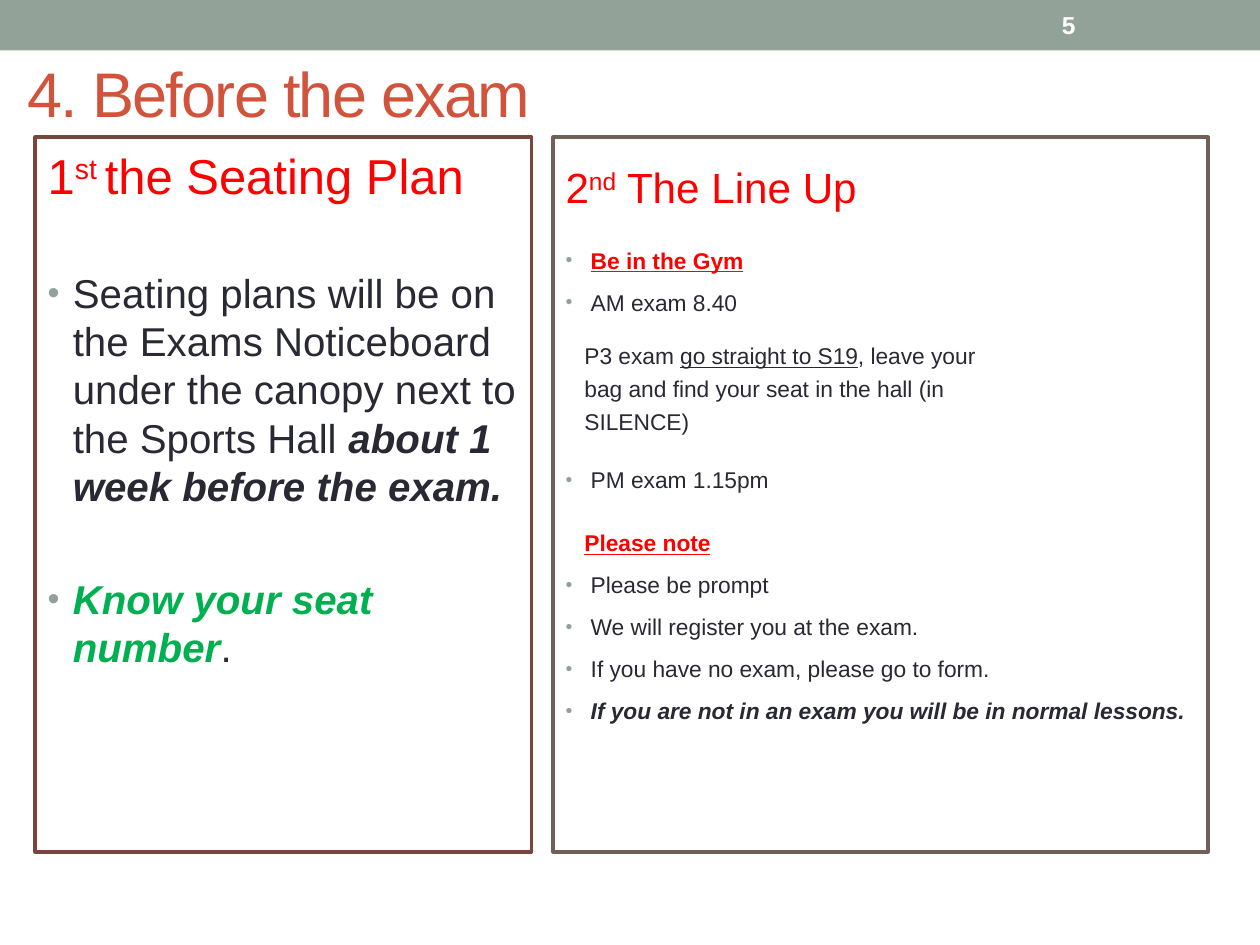
from dataclasses import dataclass

import pptx
import pptx.dml.color
import pptx.enum.shapes
import pptx.enum.text
import pptx.oxml.ns
import pptx.util
from lxml import etree

Pt, Inches = pptx.util.Pt, pptx.util.Inches
Anchor = pptx.enum.text.MSO_ANCHOR


@dataclass(frozen=True)
class Theme:
    font: str = "Arial"
    sage: str = "93A299"
    white: str = "FFFFFF"
    rust: str = "D2533C"
    ink: str = "292934"
    red: str = "FF0000"
    green: str = "00B050"
    plan_border: str = "79463D"
    lineup_border: str = "726056"
    title_size: float = 36
    number_size: float = 14
    plan_heading: float = 28
    plan_body: float = 23
    lineup_heading: float = 24.1
    lineup_body: float = 13
    border: float = 2.08


THEME = Theme()


@dataclass(frozen=True)
class Span:
    text: str
    color: str = THEME.ink
    style: str = ""  # any of b(old), i(talic), u(nderline), s(uperscript)


@dataclass(frozen=True)
class Line:
    spans: tuple[Span, ...]
    size: float
    pitch: float
    before: float = 0
    indent: float = 0
    bullet: bool = False


@dataclass(frozen=True)
class Box:
    """Lengths as shares of the slide's width and height."""
    left: float
    top: float
    width: float
    height: float


@dataclass(frozen=True)
class Panel:
    box: Box
    border: str
    top_inset: float
    lines: tuple[Line, ...]


def rgb(value: str) -> pptx.dml.color.RGBColor:
    return pptx.dml.color.RGBColor.from_string(value)


def place(box: Box) -> tuple[int, ...]:
    return (Inches(box.left * 10), Inches(box.top * 7.5),
            Inches(box.width * 10), Inches(box.height * 7.5))


def add_rectangle(slide, box: Box, fill: str, border: str = ""):
    rectangle = slide.shapes.add_shape(
        pptx.enum.shapes.MSO_SHAPE.RECTANGLE, *place(box))
    rectangle.shadow.inherit = False
    rectangle.fill.solid()
    rectangle.fill.fore_color.rgb = rgb(fill)
    if border:
        rectangle.line.color.rgb = rgb(border)
        rectangle.line.width = Pt(THEME.border)
    else:
        rectangle.line.fill.background()
    return rectangle


def add_label(slide, box: Box, text: str, size: float, color: str,
              bold: bool = False, tracking: int = 0) -> None:
    frame = slide.shapes.add_textbox(*place(box)).text_frame
    frame.word_wrap = True
    frame.vertical_anchor = Anchor.MIDDLE
    paragraph = frame.paragraphs[0]
    paragraph.font.name, paragraph.font.size = THEME.font, Pt(size)
    paragraph.font.bold = bold
    paragraph.font.color.rgb = rgb(color)
    run = paragraph.add_run()
    run.text = text
    if tracking:
        run._r.get_or_add_rPr().set("spc", str(tracking))


def set_indent(paragraph, line: Line) -> None:
    properties = paragraph._p.get_or_add_pPr()
    properties.set("marL", str(Inches(line.indent)))
    properties.set("indent", str(Inches(-line.indent if line.bullet else 0)))
    if line.bullet:
        qn = pptx.oxml.ns.qn
        color = etree.SubElement(properties, qn("a:buClr"))
        etree.SubElement(color, qn("a:srgbClr"), val=THEME.sage)
        etree.SubElement(properties, qn("a:buSzPct"), val="85000")
        etree.SubElement(properties, qn("a:buFont"), typeface=THEME.font)
        etree.SubElement(properties, qn("a:buChar"), char="•")


def write_line(paragraph, line: Line) -> None:
    paragraph.alignment = pptx.enum.text.PP_ALIGN.LEFT
    paragraph.line_spacing = Pt(line.pitch)
    paragraph.space_before = Pt(line.before)
    set_indent(paragraph, line)
    paragraph.font.name, paragraph.font.size = THEME.font, Pt(line.size)
    for span in line.spans:
        run = paragraph.add_run()
        run.text = span.text
        run.font.color.rgb = rgb(span.color)
        run.font.bold = "b" in span.style
        run.font.italic = "i" in span.style
        run.font.underline = "u" in span.style
        if "s" in span.style:
            run._r.get_or_add_rPr().set("baseline", "30000")


def add_panel(slide, panel: Panel) -> None:
    frame = add_rectangle(slide, panel.box, THEME.white, panel.border).text_frame
    frame.word_wrap = True
    frame.vertical_anchor = Anchor.TOP
    frame.margin_top = Pt(panel.top_inset)
    for index, line in enumerate(panel.lines):
        paragraph = frame.add_paragraph() if index else frame.paragraphs[0]
        write_line(paragraph, line)


def heading(number: str, suffix: str, rest: str, size: float, pitch: float) -> Line:
    return Line((Span(number, THEME.red), Span(suffix, THEME.red, "s"),
                 Span(rest, THEME.red)), size, pitch)


def plan_point(before: float, *spans: Span) -> Line:
    return Line(spans, THEME.plan_body, 27.57, before, 0.2, True)


def lineup_point(*spans: Span, before: float = 9) -> Line:
    return Line(spans, THEME.lineup_body, 15, before, 0.2, True)


def lineup_note(before: float, *spans: Span) -> Line:
    return Line(spans, THEME.lineup_body, 15, before, 0.15)


PANEL_TOP, PANEL_HEIGHT = 1.09 / 7.5, 5.67 / 7.5

SEATING_PLAN = Panel(Box(0.028, PANEL_TOP, 0.394, PANEL_HEIGHT), THEME.plan_border, 6.1, (
    heading("1", "st ", "the Seating Plan", THEME.plan_heading, 32.2),
    plan_point(36.5, Span("Seating plans will be on the Exams Noticeboard under "
                          "the canopy next to the Sports Hall "),
               Span("about 1 week before the exam.", style="bi")),
    plan_point(37, Span("Know your seat number", THEME.green, "bi"), Span(".")),
))

LINE_UP = Panel(Box(0.439, PANEL_TOP, 0.52, PANEL_HEIGHT), THEME.lineup_border, 14.6, (
    heading("2", "nd", " The Line Up", THEME.lineup_heading, 28),
    lineup_point(Span("Be in the Gym", THEME.red, "bu"), before=20.4),
    lineup_point(Span("AM exam 8.40")),
    lineup_note(15.5, Span("P3 exam "), Span("go straight to S19", style="u"),
                Span(", leave your")),
    lineup_note(3.9, Span("bag and find your seat in the hall (in")),
    lineup_note(3.9, Span("SILENCE)")),
    lineup_point(Span("PM exam 1.15pm"), before=18.2),
    lineup_note(21, Span("Please note", THEME.red, "bu")),
    lineup_point(Span("Please be prompt")),
    lineup_point(Span("We will register you at the exam.")),
    lineup_point(Span("If you have no exam, please go to form.")),
    lineup_point(Span("If you are not in an exam you will be in normal lessons.",
                      style="bi")),
))


def main() -> None:
    deck = pptx.Presentation()
    deck.slide_width, deck.slide_height = Inches(10), Inches(7.5)
    slide = deck.slides.add_slide(deck.slide_layouts[6])

    # Top band and title
    add_rectangle(slide, Box(0, 0, 1, 0.4 / 7.5), THEME.sage)
    add_label(slide, Box(0.012, 0.38 / 7.5, 0.9, 0.71 / 7.5), "4. Before the exam",
              THEME.title_size, THEME.rust, tracking=-100)

    # The two steps side by side
    for panel in (SEATING_PLAN, LINE_UP):
        add_panel(slide, panel)

    # Page number
    add_label(slide, Box(0.833, 0.02 / 7.5, 0.117, 0.36 / 7.5), "5",
              THEME.number_size, THEME.white, bold=True)
    deck.save("out.pptx")


if __name__ == "__main__":
    main()
